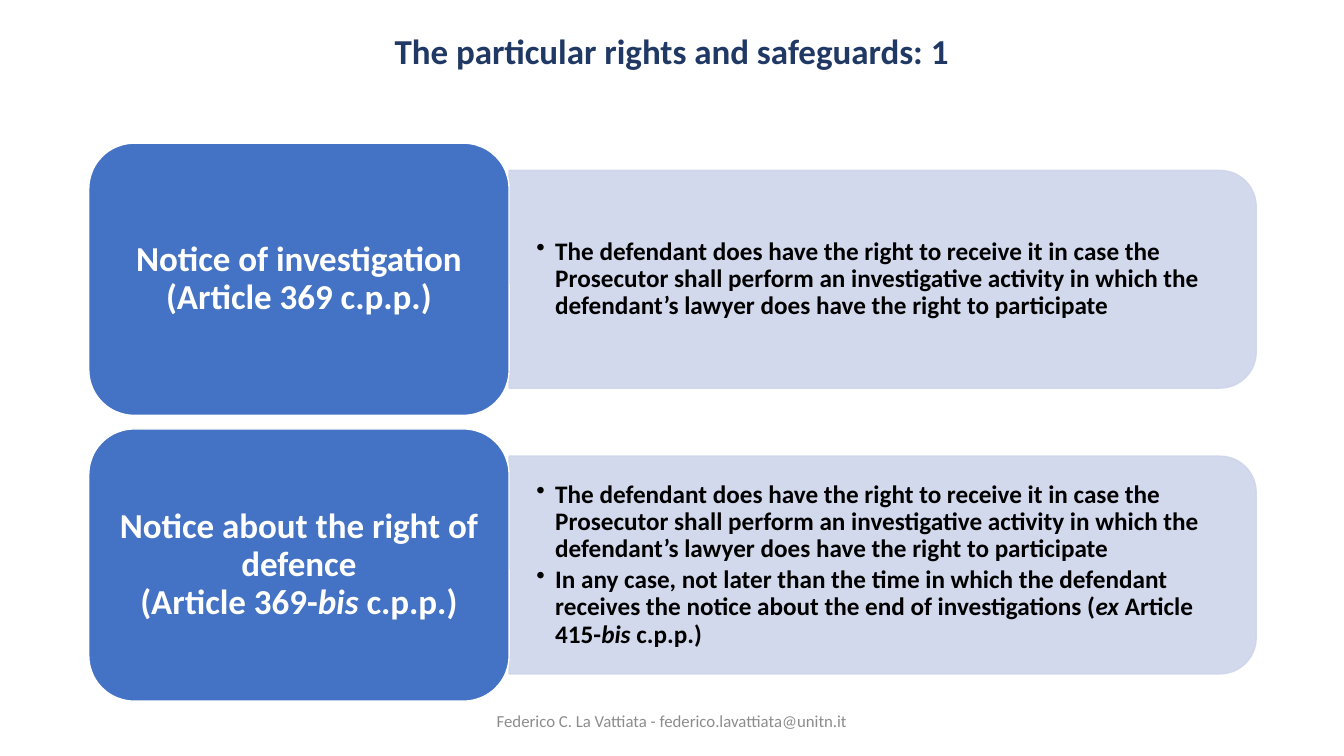
"""Build the slide on the particular rights and safeguards."""
from lxml import etree
from pptx import Presentation
from pptx.dml.color import RGBColor
from pptx.enum import shapes, text
from pptx.oxml import ns
from pptx.util import Pt

TITLE = "The particular rights and safeguards: 1"
FOOTER = "Federico C. La Vattiata - federico.lavattiata@unitn.it"
RECEIVE = ("The defendant does have the right to receive it in case the Prosecutor shall perform "
           "an investigative activity in which the defendant’s lawyer does have the right to participate")
IN_ANY_CASE = ("In any case, not later than the time in which the defendant receives the notice "
               "about the end of investigations (")
ROWS = [
    (["Notice of investigation", "\n", "(Article 369 c.p.p.)"], [[RECEIVE]]),
    (["Notice about the right of defence", "\n", "(Article 369-", ("bis",), " c.p.p.)"],
     [[RECEIVE], [IN_ANY_CASE, ("ex ",), "Article 415-", ("bis",), " c.p.p.)"]]),
]
NAVY, BLUE, PALE, WHITE, BLACK, GREY = "203864", "4472C4", "CFD5EA", "FFFFFF", "000000", "8C8C8C"

LEFT, TOP, WIDTH, CARD_H = 63.4, 102.3, 833.9, 194.4
CARD_W, PANEL_H, PITCH = WIDTH * 0.36, CARD_H * 0.8, CARD_H * 1.05
PANEL_W = WIDTH - CARD_W
INDENT = 13.5


def rgb(value):
    return RGBColor.from_string(value)


def place(sp, x, y, w, h):
    sp.left, sp.top, sp.width, sp.height = Pt(x), Pt(y), Pt(w), Pt(h)


def frame(sp, dx, dy, anchor=text.MSO_ANCHOR.MIDDLE):
    tf = sp.text_frame
    tf.word_wrap = True
    tf.vertical_anchor = anchor
    tf.margin_left = tf.margin_right = Pt(dx)
    tf.margin_top = tf.margin_bottom = Pt(dy)
    return tf


def write(p, parts, size, color, bold=True, align=text.PP_ALIGN.CENTER):
    """Add runs; a tuple holds italic words and a newline is a line break."""
    p.alignment = align
    for part in parts:
        if part == "\n":
            p.add_line_break()
            continue
        italic = isinstance(part, tuple)
        r = p.add_run()
        r.text = part[0] if italic else part
        r.font.name, r.font.size = "Calibri", Pt(size)
        r.font.bold, r.font.italic = bold, italic
        r.font.color.rgb = rgb(color)


def add_block(s, preset, box, fill, line):
    sp = s.shapes.add_shape(preset, *map(Pt, box))
    sp.shadow.inherit = False
    sp.fill.solid()
    sp.fill.fore_color.rgb = rgb(fill)
    sp.line.color.rgb = rgb(line)
    sp.line.width = Pt(1)
    return sp


def add_panel(s, y, bullets):
    x = LEFT + CARD_W
    box = (x + (PANEL_W - PANEL_H) / 2, y + (PANEL_H - PANEL_W) / 2, PANEL_H, PANEL_W)
    sp = add_block(s, shapes.MSO_SHAPE.ROUND_2_SAME_RECTANGLE, box, PALE, PALE)
    sp.rotation = 90
    for clr in sp._element.spPr.iter(ns.qn("a:srgbClr")):
        etree.SubElement(clr, ns.qn("a:alpha"), val="90000")
    inset = 7.6
    box = (x, y + inset, PANEL_W - inset, PANEL_H - 2 * inset)
    tf = frame(s.shapes.add_textbox(*map(Pt, box)), 19.5, 9.8)
    for i, parts in enumerate(bullets):
        p = tf.add_paragraph() if i else tf.paragraphs[0]
        pPr = p._p.get_or_add_pPr()
        pPr.set("marL", str(Pt(INDENT)))
        pPr.set("indent", str(Pt(-INDENT)))
        etree.SubElement(pPr, ns.qn("a:buChar"), char="•")
        p.line_spacing, p.space_after = 0.9, Pt(2.7)
        write(p, parts, 18, BLACK, align=text.PP_ALIGN.LEFT)


def add_card(s, y, parts):
    box = (LEFT, y, CARD_W, CARD_H)
    sp = add_block(s, shapes.MSO_SHAPE.ROUNDED_RECTANGLE, box, BLUE, WHITE)
    p = frame(sp, 7.2, 3.6).paragraphs[0]
    p.line_spacing = 0.9
    write(p, parts, 25, WHITE)


def main():
    prs = Presentation()
    prs.slide_width, prs.slide_height = Pt(960), Pt(540)
    s = prs.slides.add_slide(prs.slide_layouts[5])

    title = s.shapes.title
    place(title, 52, 17.3, 855.4, 37.4)
    tf = frame(title, 7.2, 3.6, text.MSO_ANCHOR.TOP)
    tf.auto_size = text.MSO_AUTO_SIZE.SHAPE_TO_FIT_TEXT
    write(tf.paragraphs[0], [TITLE], 25, NAVY)

    for i, (heading, bullets) in enumerate(ROWS):
        y = TOP + i * PITCH
        add_panel(s, y + (CARD_H - PANEL_H) / 2, bullets)
        add_card(s, y, heading)

    footer = s.shapes.add_textbox(Pt(318), Pt(500.5), Pt(324), Pt(28.8))
    write(frame(footer, 7.2, 3.6).paragraphs[0], [FOOTER], 12, GREY, bold=False)
    prs.save("out.pptx")


if __name__ == "__main__":
    main()
